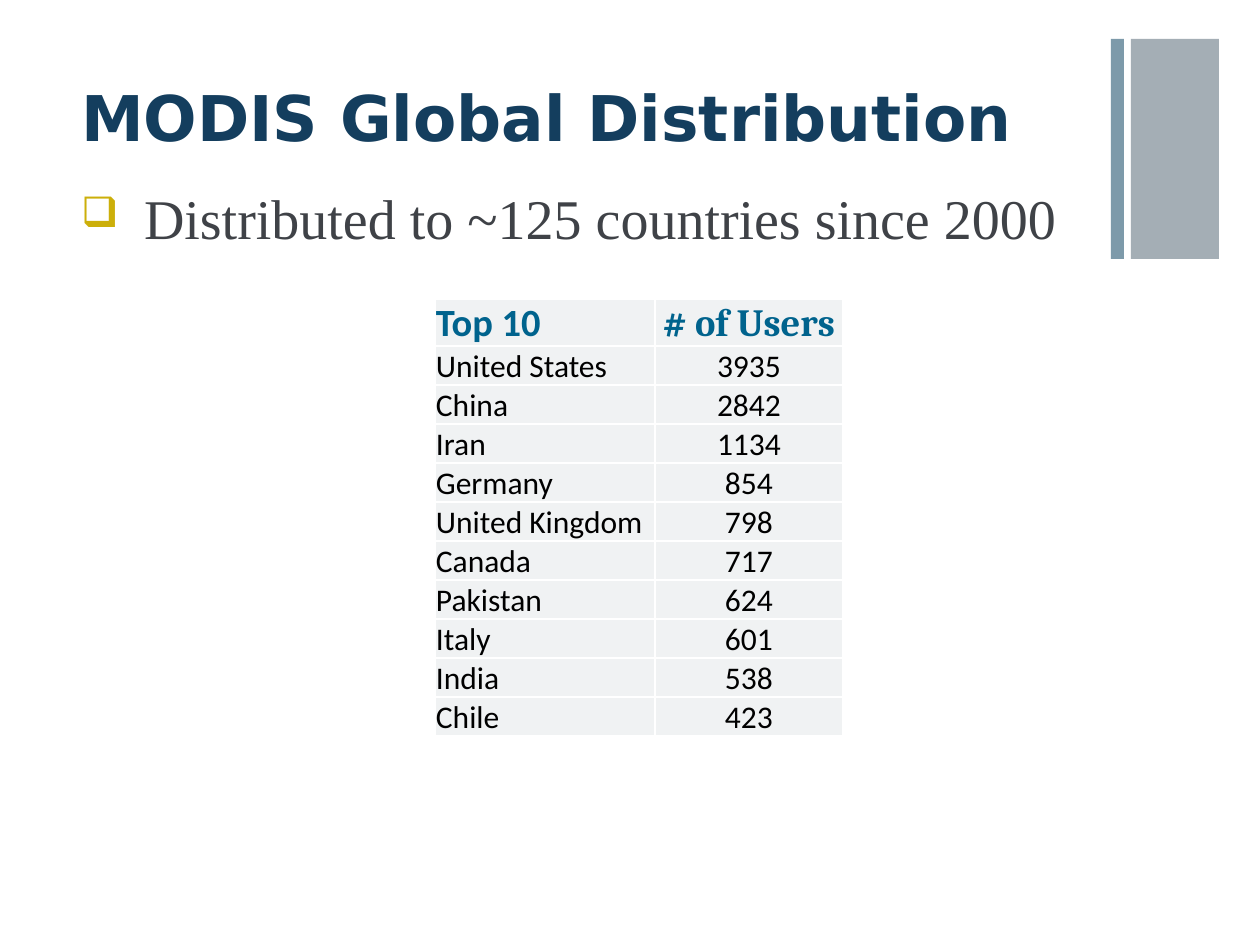
"""Build the MODIS Global Distribution slide."""
from lxml import etree
from pptx import Presentation
from pptx.dml.color import RGBColor
from pptx.enum.shapes import MSO_SHAPE
from pptx.enum.text import MSO_ANCHOR, PP_ALIGN
from pptx.oxml.ns import qn
from pptx.util import Pt

RECT = MSO_SHAPE.RECTANGLE
LOW = MSO_ANCHOR.BOTTOM
LEFT, MID = PP_ALIGN.LEFT, PP_ALIGN.CENTER
PX = 914400 // 126
HUES = {
    "gray": "A4AEB5", "blue": "7D9AAA", "navy": "143E5E", "slate": "3F4247",
    "gold": "CCAF0A", "teal": "00638D", "black": "000000",
    "pale": "F0F2F3", "white": "FFFFFF",
}
ROWS = [
    ("Top 10", "# of Users"),
    ("United States", "3935"), ("China", "2842"), ("Iran", "1134"),
    ("Germany", "854"), ("United Kingdom", "798"), ("Canada", "717"),
    ("Pakistan", "624"), ("Italy", "601"), ("India", "538"), ("Chile", "423"),
]


def style(para, face, size, hue, bold=False):
    for run in para.runs:
        run.font.name = face
        run.font.size = Pt(size)
        run.font.bold = bold
        run.font.color.rgb = RGBColor.from_string(HUES[hue])


def add_text(slide, text, box, top):
    frame = slide.shapes.add_textbox(*[n * PX for n in box]).text_frame
    frame.word_wrap = True
    frame.margin_left = frame.margin_right = 12 * PX
    frame.margin_top = top * PX
    frame.text = text
    return frame.paragraphs[0]


deck = Presentation()
deck.slide_width, deck.slide_height = 1260 * PX, 945 * PX
slide = deck.slides.add_slide(deck.slide_layouts[6])

for left, width, hue in [(1131, 88, "gray"), (1111, 13, "blue")]:
    bar = slide.shapes.add_shape(RECT, left * PX, 39 * PX, width * PX, 220 * PX)
    bar.shadow.inherit = False
    bar.fill.solid()
    bar.fill.fore_color.rgb = RGBColor.from_string(HUES[hue])
    bar.line.fill.background()

title = add_text(slide, "MODIS Global Distribution", (69, 67, 1041, 128), 12)
style(title, "DejaVu Sans", 36, "navy", True)

body = add_text(slide, "Distributed to ~125 countries since 2000",
                (69, 170, 1041, 674), 14)
props = body._p.get_or_add_pPr()
props.set("marL", str(63 * PX))
props.set("indent", str(-63 * PX))
tint = etree.SubElement(props, qn("a:buClr"))
etree.SubElement(tint, qn("a:srgbClr"), val=HUES["gold"])
etree.SubElement(props, qn("a:buSzPct"), val="75000")
etree.SubElement(props, qn("a:buChar"), char="❑")
style(body, "Times New Roman", 32, "slate")

table = slide.shapes.add_table(len(ROWS), 2, 435 * PX, 299 * PX,
                               408 * PX, 437 * PX).table
table.columns[0].width, table.columns[1].width = 220 * PX, 188 * PX
for r, row in enumerate(ROWS):
    head = r == 0
    table.rows[r].height = (47 if head else 39) * PX
    for c, text in enumerate(row):
        cell = table.cell(r, c)
        cell.text = text
        cell.vertical_anchor = LOW
        cell.margin_left = cell.margin_right = cell.margin_top = PX
        cell.margin_bottom = 0
        para = cell.text_frame.paragraphs[0]
        para.alignment = MID if c else LEFT
        if head:
            style(para, "Cambria" if c else "Calibri", 22, "teal", True)
        else:
            style(para, "Calibri", 18, "black")
        props = cell._tc.get_or_add_tcPr()
        for side in ("lnL", "lnR", "lnT", "lnB"):
            edge = etree.SubElement(props, qn("a:" + side), w=str(Pt(1)))
            paint = etree.SubElement(edge, qn("a:solidFill"))
            etree.SubElement(paint, qn("a:srgbClr"), val=HUES["white"])
        cell.fill.solid()
        cell.fill.fore_color.rgb = RGBColor.from_string(HUES["pale"])

deck.save("out.pptx")
